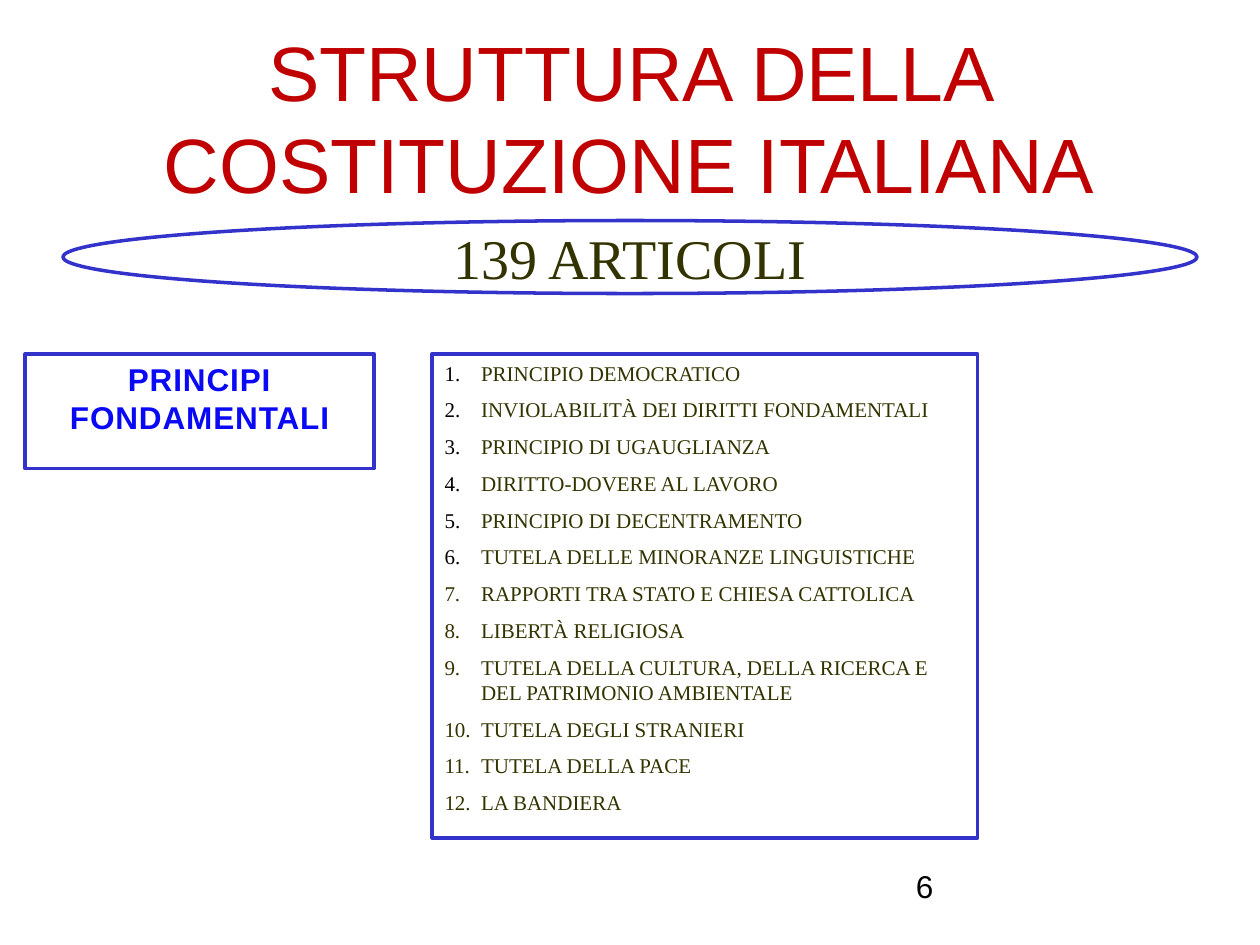
from lxml.etree import SubElement
from pptx import Presentation
from pptx.dml.color import RGBColor
from pptx.enum.shapes import MSO_SHAPE as Shape
from pptx.enum.text import MSO_ANCHOR as Anchor, MSO_AUTO_SIZE as AutoSize, PP_ALIGN as Align
from pptx.oxml import parse_xml
from pptx.oxml.ns import nsdecls, qn
from pptx.util import Inches, Pt

RED = RGBColor(0xC0, 0x00, 0x00)
OLIVE = RGBColor(0x33, 0x33, 0x00)
BORDER = RGBColor(0x33, 0x33, 0xCC)
BLUE = RGBColor(0x09, 0x09, 0xF6)
BLACK = RGBColor(0x00, 0x00, 0x00)
WHITE = RGBColor(0xFF, 0xFF, 0xFF)

TITLE_FONT = {"name": "Arial", "size": Pt(44), "color": RED}
ARTICLES_FONT = {"name": "Times New Roman", "size": Pt(32), "color": OLIVE}
HEADING_FONT = {"name": "Arial", "size": Pt(18), "bold": True, "color": BLUE}
LIST_FONT = {"name": "Times New Roman", "size": Pt(12), "color": OLIVE}
NUMBER_FONT = {"name": "Arial", "size": Pt(18), "color": BLACK}

HANGING_INDENT = Inches(0.29)
AUTO_NUMBERED = [
    "PRINCIPIO DEMOCRATICO",
    "INVIOLABILITÀ DEI DIRITTI FONDAMENTALI",
    "PRINCIPIO DI UGAUGLIANZA",
    "DIRITTO-DOVERE AL LAVORO",
    "PRINCIPIO DI DECENTRAMENTO",
    "TUTELA DELLE MINORANZE LINGUISTICHE",
]
TYPED_NUMBERS = [
    "7.\tRAPPORTI TRA STATO E CHIESA CATTOLICA",
    "8.\tLIBERTÀ RELIGIOSA",
    "9.\tTUTELA DELLA CULTURA, DELLA RICERCA E DEL PATRIMONIO AMBIENTALE",
    "10.\tTUTELA DEGLI STRANIERI",
    "11.\tTUTELA DELLA PACE",
    "12.\tLA BANDIERA",
]


def place(shape, left, top, width, height):
    position = {"left": left, "top": top, "width": width, "height": height}
    for name, value in position.items():
        setattr(shape, name, Inches(value))


def write(paragraph, text, font_format, alignment=Align.LEFT):
    paragraph.alignment = alignment
    run = paragraph.add_run()
    run.text = text
    for name, value in font_format.items():
        if name == "color":
            run.font.color.rgb = value
        else:
            setattr(run.font, name, value)
    return run


def set_frame(shape, anchor, wrap=True):
    frame_format = {"vertical_anchor": anchor, "word_wrap": wrap, "auto_size": AutoSize.NONE}
    for name, value in frame_format.items():
        setattr(shape.text_frame, name, value)
    return shape.text_frame.paragraphs[0]


def set_outline(shape):
    shape.line.color.rgb = BORDER
    shape.line.width = Pt(2)


def fill_title(title):
    place(title, 0.5, 0.3, 9, 1.25)
    paragraph = set_frame(title, Anchor.MIDDLE)
    write(paragraph, "STRUTTURA DELLA COSTITUZIONE ITALIANA", TITLE_FONT, Align.CENTER)


def fill_articles_ellipse(body):
    place(body, 0.5, 1.75, 9, 0.58)
    geometry = parse_xml(f'<a:prstGeom {nsdecls("a")} prst="ellipse"><a:avLst/></a:prstGeom>')
    body.element.spPr.find(qn("a:xfrm")).addnext(geometry)
    set_outline(body)
    paragraph = set_frame(body, Anchor.MIDDLE, wrap=False)
    properties = paragraph._p.get_or_add_pPr()
    properties.set("marL", "0")
    properties.set("indent", "0")
    SubElement(properties, qn("a:buNone"))
    paragraph.space_before = Pt(0)
    write(paragraph, "139 ARTICOLI", ARTICLES_FONT, Align.CENTER)


def add_box(slide, left, top, width, height):
    box = slide.shapes.add_shape(
        Shape.RECTANGLE, Inches(left), Inches(top), Inches(width), Inches(height)
    )
    box.shadow.inherit = False
    box.fill.solid()
    box.fill.fore_color.rgb = WHITE
    set_outline(box)
    return box


def add_heading(slide):
    box = add_box(slide, 0.2, 2.81, 2.77, 0.91)
    paragraph = set_frame(box, Anchor.TOP)
    run = write(paragraph, "PRINCIPI FONDAMENTALI", HEADING_FONT, Align.CENTER)
    run.font._element.set("spc", "50")


def number_automatically(properties):
    color = SubElement(SubElement(properties, qn("a:buClr")), qn("a:srgbClr"))
    color.set("val", str(BLACK))
    SubElement(properties, qn("a:buFont")).set("typeface", "Times New Roman")
    SubElement(properties, qn("a:buAutoNum")).set("type", "arabicPeriod")


def add_principles(slide):
    box = add_box(slide, 3.43, 2.81, 4.33, 3.84)
    paragraph = set_frame(box, Anchor.TOP)
    for index, text in enumerate(AUTO_NUMBERED + TYPED_NUMBERS):
        if index:
            paragraph = box.text_frame.add_paragraph()
        properties = paragraph._p.get_or_add_pPr()
        properties.set("marL", str(HANGING_INDENT))
        properties.set("indent", str(-HANGING_INDENT))
        if index < len(AUTO_NUMBERED):
            number_automatically(properties)
        paragraph.space_before = Pt(6.6 if index else 0)
        write(paragraph, text, LIST_FONT)


def add_slide_number(slide):
    box = slide.shapes.add_textbox(Inches(7.17), Inches(6.83), Inches(2.33), Inches(0.52))
    write(set_frame(box, Anchor.TOP), "6", NUMBER_FONT)


def main():
    presentation = Presentation()
    presentation.slide_width = Inches(10)
    presentation.slide_height = Inches(7.5)
    slide = presentation.slides.add_slide(presentation.slide_layouts[1])
    fill_title(slide.shapes.title)
    fill_articles_ellipse(slide.placeholders[1])
    add_heading(slide)
    add_principles(slide)
    add_slide_number(slide)
    presentation.save("out.pptx")


if __name__ == "__main__":
    main()
